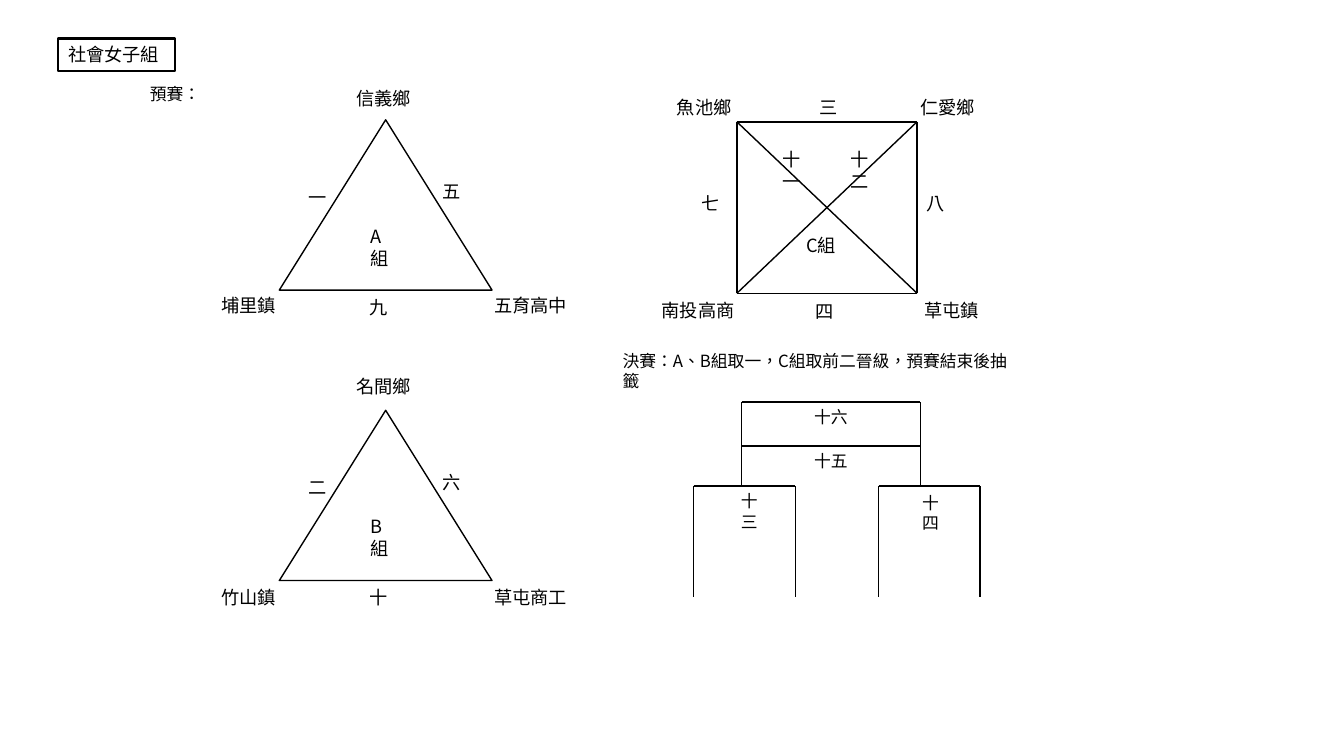
from dataclasses import dataclass

from pptx import Presentation
from pptx.dml.color import RGBColor
from pptx.enum.shapes import MSO_CONNECTOR as Link, MSO_SHAPE as Preset
from pptx.enum.text import MSO_ANCHOR as Anchor, MSO_AUTO_SIZE as AutoSize, PP_ALIGN as Align
from pptx.oxml.ns import qn
from pptx.util import Cm, Pt


@dataclass(frozen=True)
class Theme:
    ink: RGBColor = RGBColor(0, 0, 0)
    paper: RGBColor = RGBColor(255, 255, 255)
    font: str = "Noto Sans CJK SC"
    language: str = "zh-TW"
    label: int = 13
    note: int = 12
    stroke: float = 1
    frame: float = 1.5


THEME = Theme()
ONE_LINE, TWO_LINES = 0.81, 1.37  # box heights in cm


def place(shape, left, top, width, height):
    shape.left, shape.top, shape.width, shape.height = map(Cm, (left, top, width, height))


def write(shape, text, size=THEME.label, fit=AutoSize.SHAPE_TO_FIT_TEXT):
    frame = shape.text_frame
    frame.text = text
    frame.word_wrap = True
    frame.auto_size = fit
    frame.vertical_anchor = Anchor.TOP
    para = frame.paragraphs[0]
    para.alignment = Align.LEFT
    span = para.runs[0]
    span.font.name = THEME.font
    span.font.size = Pt(size)
    span.font.color.rgb = THEME.ink
    # East Asian typeface and language
    properties = span.font._element
    properties.set("lang", THEME.language)
    east = properties.makeelement(qn("a:ea"), {"typeface": THEME.font})
    properties.find(qn("a:latin")).addnext(east)


def add_label(page, text, left, top, width=1.12, height=ONE_LINE, size=THEME.label):
    box = page.shapes.add_textbox(Cm(left), Cm(top), Cm(width), Cm(height))
    write(box, text, size=size)


def add_line(page, start, end):
    line = page.shapes.add_connector(Link.STRAIGHT, *map(Cm, (*start, *end)))
    line.line.color.rgb = THEME.ink
    line.line.width = Pt(THEME.stroke)
    properties = line._element.spPr
    properties.append(properties.makeelement(qn("a:effectLst"), {}))


def add_path(page, *points):
    for start, end in zip(points, points[1:]):
        add_line(page, start, end)


def add_title(page, text):
    title = page.shapes.title
    place(title, 1.47, 0.97, 2.95, ONE_LINE)
    # A fixed frame keeps the placeholder at one line
    write(title, text, fit=AutoSize.NONE)
    title.line.color.rgb = THEME.ink
    title.line.width = Pt(THEME.frame)


def add_triangle_group(page, top, name, corners, games, apex_top, base_top):
    triangle = page.shapes.add_shape(Preset.ISOSCELES_TRIANGLE, Cm(7.04), Cm(top), Cm(5.36), Cm(4.29))
    triangle.shadow.inherit = False
    triangle.fill.background()
    triangle.line.color.rgb = THEME.ink
    triangle.line.width = Pt(THEME.stroke)
    add_label(page, name, 9.09, top + 2.53, width=1.22)
    # Game numbers beside the left, right and bottom edges
    for game, left, drop in zip(games, (7.52, 10.9, 9.07), (1.55, 1.4, 4.32)):
        add_label(page, game, left, top + drop, width=1.02)
    # Teams at the apex, left and right corners
    apex, left_team, right_team = corners
    add_label(page, apex, 8.74, apex_top, width=1.96)
    add_label(page, left_team, 5.33, base_top, width=1.96)
    add_label(page, right_team, 12.21, base_top, width=2.44)


def add_square_group(page):
    left, right, top, bottom = 18.57, 23.11, 3.07, 7.39
    # Edges and diagonals
    add_path(page, (left, top), (right, top), (right, bottom), (left, bottom), (left, top))
    add_line(page, (left, top), (right, bottom))
    add_line(page, (right, top), (left, bottom))
    # Game numbers and group name
    add_label(page, "三", 20.4, 2.31, width=0.81)
    add_label(page, "四", 20.29, 7.44)
    add_label(page, "七", 17.42, 4.72)
    add_label(page, "八", right, 4.72)
    add_label(page, "十一", 19.48, 3.61, height=TWO_LINES)
    add_label(page, "十二", 21.18, 3.61, height=TWO_LINES)
    add_label(page, "C組", 20.07, 5.79, width=1.45)
    # Teams
    add_label(page, "魚池鄉", 16.81, 2.31, width=1.96)
    add_label(page, "仁愛鄉", 22.94, 2.31, width=1.96)
    add_label(page, "南投高商", 16.43, 7.42, width=2.44)
    add_label(page, "草屯鎮", 23.04, 7.42, width=1.96)


def add_final_bracket(page):
    final, third_place, semifinal, foot = 10.13, 11.24, 12.25, 15.04
    left, right = 18.69, 23.19
    # Final and third-place game
    add_path(page, (left, semifinal), (left, final), (right, final), (right, semifinal))
    add_line(page, (left, third_place), (right, third_place))
    # Semifinals
    for start in (17.48, 22.14):
        end = start + 2.56
        add_path(page, (start, foot), (start, semifinal), (end, semifinal), (end, foot))
    # Game numbers
    for game, x, y, width, height in (
        ("十六", 20.27, final, 1.4, 0.76),
        ("十五", 20.27, third_place, 1.4, 0.76),
        ("十三", 18.42, semifinal, 0.84, 1.27),
        ("十四", 22.99, semifinal + 0.04, 0.84, 1.27),
    ):
        add_label(page, game, x, y, width=width, height=height, size=THEME.note)


def main():
    deck = Presentation()
    deck.slide_width, deck.slide_height = Cm(33.87), Cm(19.05)
    page = deck.slides.add_slide(deck.slide_layouts[5])
    page.background.fill.solid()
    page.background.fill.fore_color.rgb = THEME.paper

    add_title(page, "社會女子組")

    # Preliminary round
    add_label(page, "預賽：", 3.53, 1.98, width=1.83, height=0.76, size=THEME.note)
    add_triangle_group(page, 3.02, "A組", ("信義鄉", "埔里鎮", "五育高中"), "一五九",
                       apex_top=2.08, base_top=7.29)
    add_triangle_group(page, 10.34, "B組", ("名間鄉", "竹山鎮", "草屯商工"), "二六十",
                       apex_top=9.32, base_top=14.66)
    add_square_group(page)

    # Final round
    add_label(page, "決賽：A、B組取一，C組取前二晉級，預賽結束後抽籤", 15.44, 8.71,
              width=10.52, height=0.76, size=THEME.note)
    add_final_bracket(page)

    deck.save("out.pptx")


if __name__ == "__main__":
    main()
